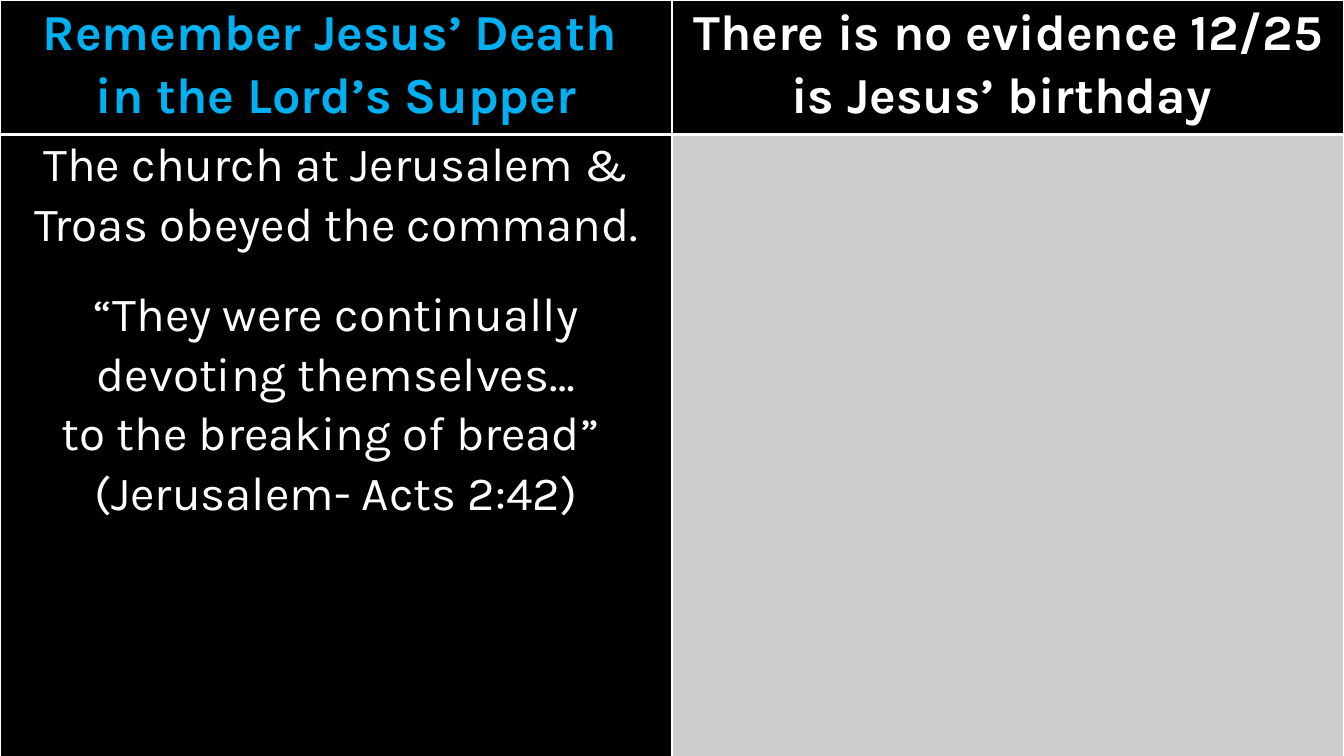
from lxml import etree
from pptx import Presentation
from pptx.dml.color import RGBColor
from pptx.enum.text import PP_ALIGN
from pptx.oxml.ns import qn
from pptx.util import Emu, Pt

PX = 9525
WIDE, HIGH = 1280, 720
HEAD, BODY = 128, 640
BLACK, WHITE, BLUE, GRAY = "000000", "FFFFFF", "00B0F0", "CCCCCC"
FONT = "Karla"
CENTER = PP_ALIGN.CENTER

LEFT_HEAD = ["Remember Jesus’ Death ", "in the Lord’s Supper"]
RIGHT_HEAD = ["There is no evidence 12/25 is Jesus’ birthday "]
VERSE = [
    "The church at Jerusalem & Troas obeyed the command.",
    "“They were continually devoting themselves…",
    "to the breaking of bread” ",
    "(Jerusalem- Acts 2:42)",
]


def px(count):
    return Emu(count * PX)


def color(code):
    return RGBColor.from_string(code)


def border(cell, side, width):
    props = cell._tc.get_or_add_tcPr()
    line = etree.SubElement(props, qn(f"a:ln{side}"), w=str(Pt(width)))
    fill = etree.SubElement(line, qn("a:solidFill"))
    etree.SubElement(fill, qn("a:srgbClr"), val=WHITE)


def style(cell, fill, top, bottom):
    """Set the margins, borders and fill; widths are in points."""
    cell.margin_left = cell.margin_right = px(7)
    cell.margin_top = cell.margin_bottom = 0
    for side, width in zip("LRTB", (1, 1, top, bottom)):
        border(cell, side, width)
    cell.fill.solid()
    cell.fill.fore_color.rgb = color(fill)


def write(cell, lines, size, ink, bold):
    frame = cell.text_frame
    frame.text = "\n".join(lines)
    for para in frame.paragraphs:
        para.alignment = CENTER
        para.line_spacing = 1.07
        font = para.runs[0].font
        font.name = FONT
        font.size = Pt(size)
        font.bold = bold
        font.color.rgb = color(ink)


def main():
    deck = Presentation()
    deck.slide_width, deck.slide_height = px(WIDE), px(HIGH)
    slide = deck.slides.add_slide(deck.slide_layouts[6])
    back = slide.background.fill
    back.solid()
    back.fore_color.rgb = color(BLACK)

    frame = slide.shapes.add_table(2, 2, 0, 0, px(WIDE), px(HEAD + BODY))
    table = frame.table
    table.first_row = table.horz_banding = False
    table.rows[0].height, table.rows[1].height = px(HEAD), px(BODY)

    for col, fill in enumerate((BLACK, GRAY)):
        style(table.cell(0, col), BLACK, 1, 3)
        style(table.cell(1, col), fill, 3, 1)

    write(table.cell(0, 0), LEFT_HEAD, 36, BLUE, True)
    write(table.cell(0, 1), RIGHT_HEAD, 36, WHITE, True)
    verse = table.cell(1, 0)
    write(verse, VERSE, 34, WHITE, False)
    verse.text_frame.paragraphs[1].space_before = Pt(22)

    deck.save("out.pptx")


if __name__ == "__main__":
    main()
